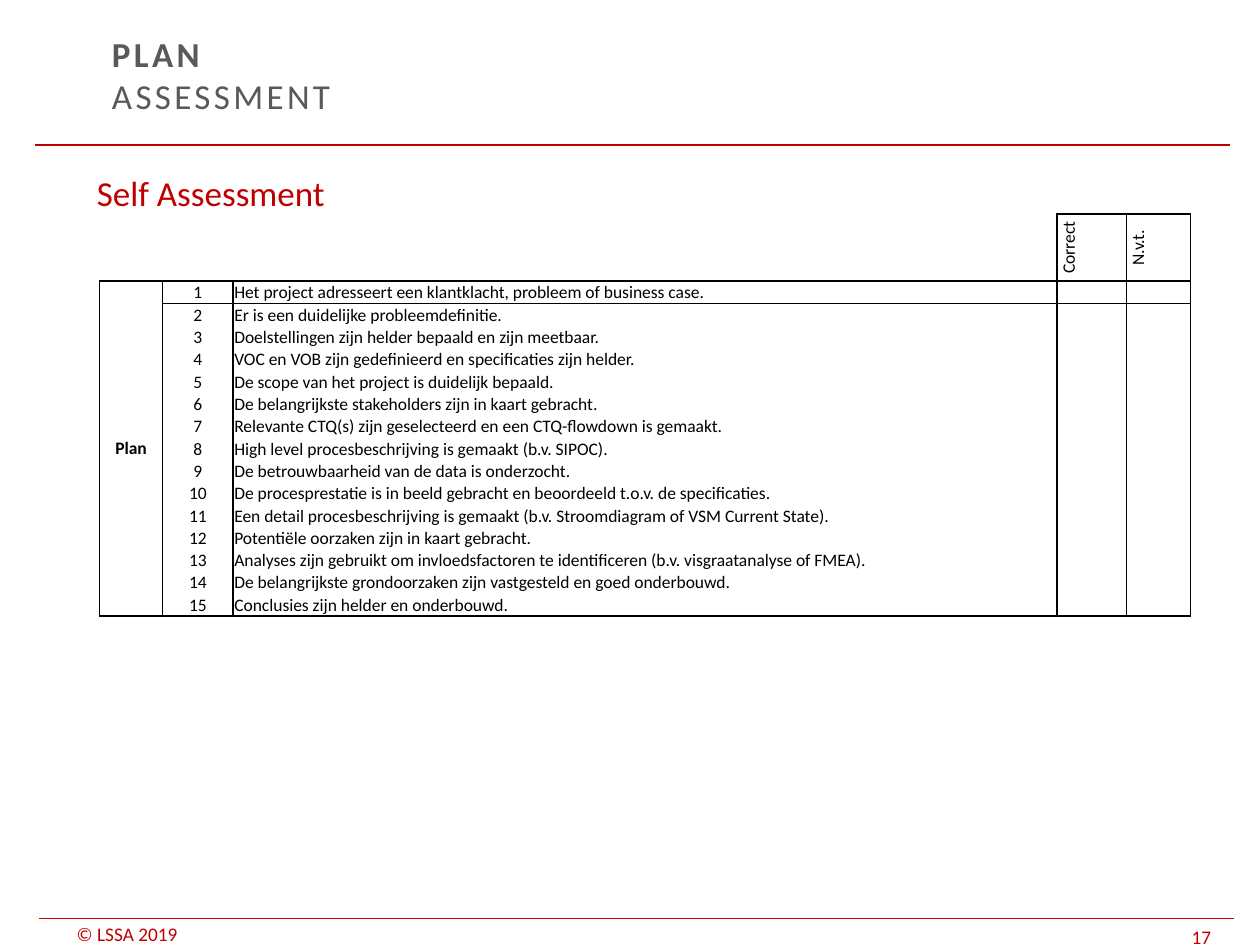
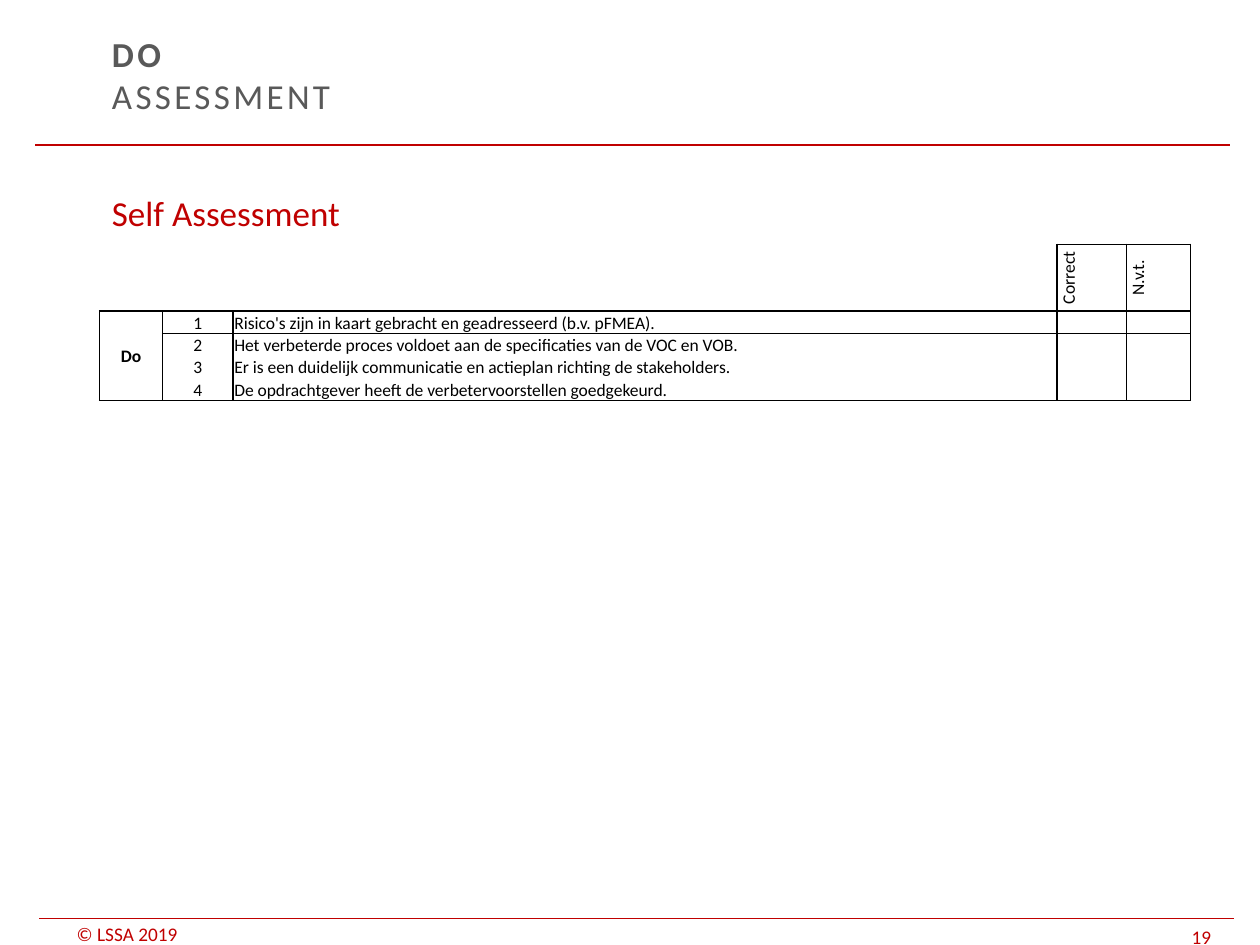
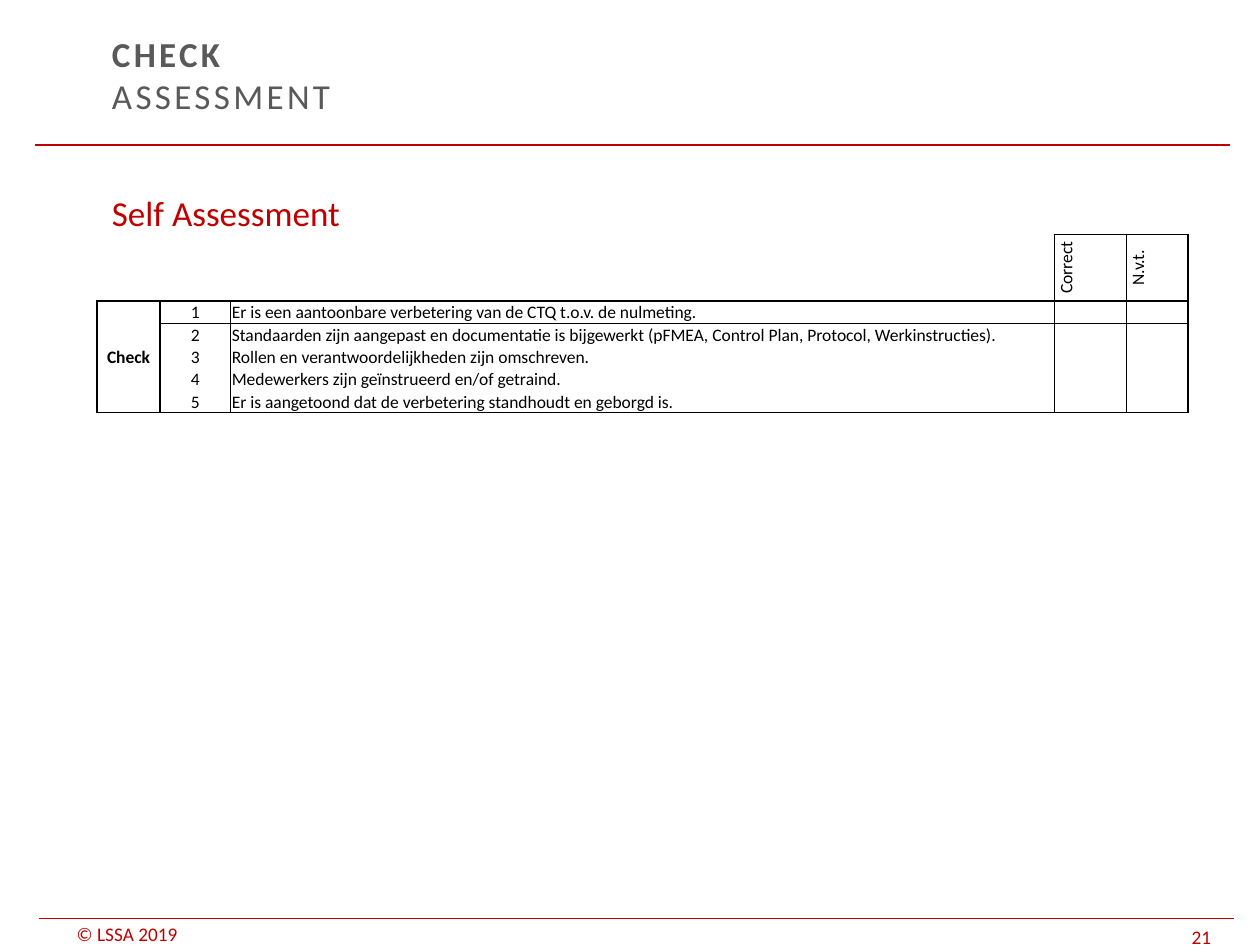
from lxml import etree
from pptx import Presentation
from pptx.dml.color import RGBColor
from pptx.enum.shapes import MSO_CONNECTOR
from pptx.enum.text import MSO_ANCHOR, PP_ALIGN
from pptx.oxml.ns import qn
from pptx.util import Pt

PX = 9144
LINE = MSO_CONNECTOR.STRAIGHT
TOP, MID, LOW = MSO_ANCHOR.TOP, MSO_ANCHOR.MIDDLE, MSO_ANCHOR.BOTTOM
LEFT, MIDST = PP_ALIGN.LEFT, PP_ALIGN.CENTER
COLORS = {"red": "C00000", "gray": "595959", "black": "000000"}
FORMATS = {
    "title": {"size": Pt(20), "color": "gray", "bold": True},
    "part": {"size": Pt(20), "color": "gray", "bold": False},
    "head": {"size": Pt(20), "color": "red"},
    "foot": {"size": Pt(11), "color": "red"},
    "cell": {"size": Pt(10), "color": "black", "bold": False},
    "phase": {"size": Pt(10), "color": "black", "bold": True},
}
PLAIN = "{2D5ABB26-0587-4C30-8999-92F81FD0307C}"
HEADS = ["", "", "", "Correct", "N.v.t."]
HEAD_SIDES = ["B", "B", "RB", "LRTB", "LRTB"]
BODY_SIDES = ["LR", "LR", "LR", "L", "R"]
THIN = {(3, "R"), (4, "L")}
HEAD_H, ROW_H = 53, 17

SLIDES = [
    {"phase": "Plan", "page": 17, "head": (67, 131), "table": (79, 170),
     "cols": [50, 56, 654, 55, 51],
     "points": [
         "Het project adresseert een klantklacht, probleem of business case.",
         "Er is een duidelijke probleemdefinitie.",
         "Doelstellingen zijn helder bepaald en zijn meetbaar.",
         "VOC en VOB zijn gedefinieerd en specificaties zijn helder.",
         "De scope van het project is duidelijk bepaald.",
         "De belangrijkste stakeholders zijn in kaart gebracht.",
         "Relevante CTQ(s) zijn geselecteerd en een CTQ-flowdown is gemaakt.",
         "High level procesbeschrijving is gemaakt (b.v. SIPOC).",
         "De betrouwbaarheid van de data is onderzocht.",
         "De procesprestatie is in beeld gebracht en beoordeeld t.o.v. de specificaties.",
         "Een detail procesbeschrijving is gemaakt (b.v. Stroomdiagram of VSM Current State).",
         "Potentiële oorzaken zijn in kaart gebracht.",
         "Analyses zijn gebruikt om invloedsfactoren te identificeren (b.v. visgraatanalyse of FMEA).",
         "De belangrijkste grondoorzaken zijn vastgesteld en goed onderbouwd.",
         "Conclusies zijn helder en onderbouwd."]},
    {"phase": "Do", "page": 19, "head": (79, 147), "table": (79, 194),
     "cols": [50, 56, 654, 55, 51],
     "points": [
         "Risico's zijn in kaart gebracht en geadresseerd (b.v. pFMEA).",
         "Het verbeterde proces voldoet aan de specificaties van de VOC en VOB.",
         "Er is een duidelijk communicatie en actieplan richting de stakeholders.",
         "De opdrachtgever heeft de verbetervoorstellen goedgekeurd."]},
    {"phase": "Check", "page": 21, "head": (79, 147), "table": (77, 186),
     "cols": [50, 56, 654, 57, 49],
     "points": [
         "Er is een aantoonbare verbetering van de CTQ t.o.v. de nulmeting.",
         "Standaarden zijn aangepast en documentatie is bijgewerkt "
         "(pFMEA, Control Plan, Protocol, Werkinstructies).",
         "Rollen en verantwoordelijkheden zijn omschreven.",
         "Medewerkers zijn geïnstrueerd en/of getraind.",
         "Er is aangetoond dat de verbetering standhoudt en geborgd is."]},
]


def scale(*sizes):
    """Turn px lengths into EMU."""
    return [size * PX for size in sizes]


def add_run(para, text, style):
    """Add a run of text in a named format."""
    run = para.add_run()
    run.text = text
    run.font.name = "Calibri"
    for name, value in FORMATS[style].items():
        if name == "color":
            run.font.color.rgb = RGBColor.from_string(COLORS[value])
        else:
            setattr(run.font, name, value)
    return run


def add_box(slide, box, anchor, pad):
    """Add a text box and return its first paragraph."""
    frame = slide.shapes.add_textbox(*scale(*box)).text_frame
    form = {"word_wrap": True, "vertical_anchor": anchor,
            "margin_top": pad * PX, "margin_bottom": pad * PX}
    for name, value in form.items():
        setattr(frame, name, value)
    return frame.paragraphs[0]


def add_rule(slide, left, top):
    """Draw a red rule across the slide."""
    rule = slide.shapes.add_connector(LINE, *scale(left, top, left + 948, top))
    rule.line.color.rgb = RGBColor.from_string(COLORS["red"])
    rule.line.width = Pt(0.75)
    etree.SubElement(rule._element.spPr, qn("a:effectLst"))


def add_frame(slide, phase, page):
    """Add the title, rules and footer of a slide."""
    add_run(add_box(slide, (51, 732, 142, 18), LOW, 0), "© LSSA 2019", "foot")
    add_run(add_box(slide, (936, 731, 64, 22), LOW, 0), str(page), "foot")
    add_rule(slide, 28, 115)
    add_rule(slide, 31, 729)
    para = add_box(slide, (79, 26, 709, 66), MID, 5)
    first = add_run(para, phase.upper(), "title")
    para.add_line_break()
    for run in (first, add_run(para, "ASSESSMENT", "part")):
        run.font._element.set("spc", "190")


def add_edges(cell, col, sides):
    """Draw the named sides of a cell in black."""
    props = cell._tc.get_or_add_tcPr()
    for side in "LRTB":
        if side in sides:
            width = Pt(0.5 if (col, side) in THIN else 1)
            edge = etree.SubElement(props, qn(f"a:ln{side}"), w=str(width))
            fill = etree.SubElement(edge, qn("a:solidFill"))
            etree.SubElement(fill, qn("a:srgbClr"), val=COLORS["black"])


def fill_cell(cell, col, text, style, sides):
    """Set the text, margins and edges of a cell."""
    form = {"margin_left": PX, "margin_right": PX, "margin_top": PX,
            "margin_bottom": 0, "vertical_anchor": TOP if col == 2 else MID}
    for name, value in form.items():
        setattr(cell, name, value)
    para = cell.text_frame.paragraphs[0]
    para.alignment = LEFT if col == 2 else MIDST
    if text:
        add_run(para, text, style)
    else:
        etree.SubElement(para._p, qn("a:endParaRPr"), sz="1000")
    add_edges(cell, col, sides)
    cell.fill.background()


def add_list(slide, spot, cols, phase, points):
    """Add the table of points to assess."""
    count = len(points)
    box = scale(*spot, sum(cols), HEAD_H + ROW_H * count)
    shape = slide.shapes.add_table(count + 1, len(cols), *box)
    grid = shape.table
    grid.first_row = grid.horz_banding = False
    for style in shape._element.iter(qn("a:tableStyleId")):
        style.text = PLAIN
    for col, width in enumerate(cols):
        grid.columns[col].width = width * PX
    for row in range(count + 1):
        grid.rows[row].height = (ROW_H if row else HEAD_H) * PX
    for col, text in enumerate(HEADS):
        cell = grid.cell(0, col)
        fill_cell(cell, col, text, "cell", HEAD_SIDES[col])
        if text:
            cell._tc.get_or_add_tcPr().set("vert", "vert270")
    for row, point in enumerate(points, 1):
        ends = "T" * (row == 1) + "B" * (row == count)
        label = phase if row == 1 else ""
        for col, text in enumerate([label, str(row), point, "", ""]):
            style = "cell" if col else "phase"
            sides = BODY_SIDES[col] + ends if col else "LRTB"
            fill_cell(grid.cell(row, col), col, text, style, sides)
    grid.cell(1, 0).merge(grid.cell(count, 0))


def add_page(deck, data):
    """Build one assessment slide."""
    slide = deck.slides.add_slide(deck.slide_layouts[6])
    add_frame(slide, data["phase"], data["page"])
    para = add_box(slide, (*data["head"], 866, 551), TOP, 5)
    add_run(para, "Self Assessment", "head")
    add_list(slide, data["table"], data["cols"], data["phase"], data["points"])


def main():
    """Build and save the deck."""
    deck = Presentation()
    deck.slide_width, deck.slide_height = scale(1000, 750)
    for data in SLIDES:
        add_page(deck, data)
    deck.save("out.pptx")


if __name__ == "__main__":
    main()
